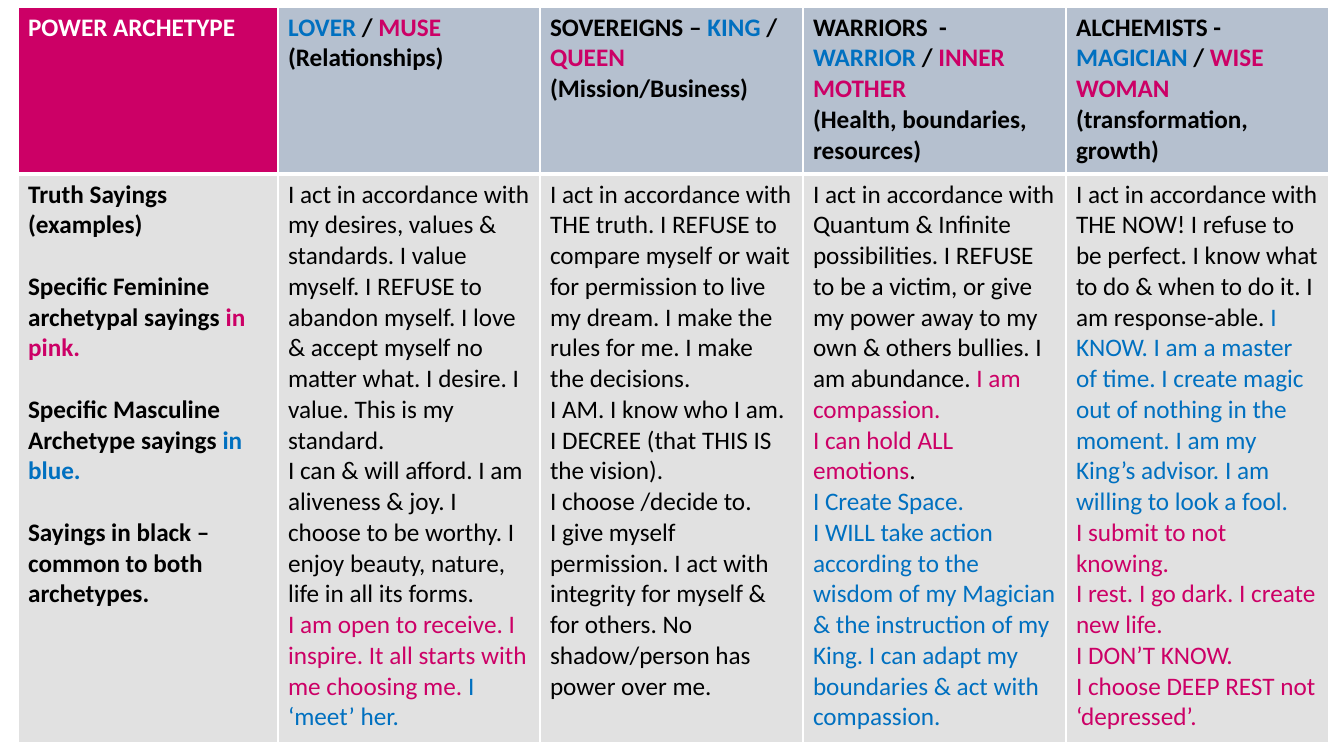
from lxml import etree
from pptx import Presentation
from pptx.dml.color import RGBColor
from pptx.oxml.ns import qn
from pptx.util import Emu, Pt

EMU_PER_PX = 914400 / 100.8
BLACK, WHITE = "000000", "FFFFFF"
PINK, BLUE = "CC0066", "0070C0"
HEADER_FILL, BODY_FILL = "B5C0CF", "E1E1E1"
COLUMNS = [260, 262, 263, 263, 263]
ROWS = [167, 569]

# Each cell is a list of paragraphs, each paragraph a list of (text, colour) runs.
HEADERS = [
    [[("POWER ARCHETYPE", WHITE)]],
    [[("LOVER ", BLUE), ("/ ", BLACK), ("MUSE ", PINK), ("(Relationships)", BLACK)]],
    [[("SOVEREIGNS – ", BLACK), ("KING ", BLUE), ("/ ", BLACK), ("QUEEN ", PINK),
      ("(Mission/Business)", BLACK)]],
    [[("WARRIORS  - ", BLACK), ("WARRIOR ", BLUE), ("/ ", BLACK), ("INNER MOTHER", PINK)],
     [("(Health, boundaries, resources)", BLACK)]],
    [[("ALCHEMISTS - ", BLACK), ("MAGICIAN ", BLUE), ("/ ", BLACK), ("WISE WOMAN", PINK)],
     [("(transformation, growth)", BLACK)]],
]
SAYINGS = [
    [[("Truth Sayings (examples)", BLACK)],
     [("Specific Feminine archetypal sayings ", BLACK), ("in pink.", PINK)],
     [("Specific Masculine Archetype sayings ", BLACK), ("in blue.", BLUE)],
     [("Sayings in black – common to both archetypes.", BLACK)]],
    [[("I act in accordance with my desires, values & standards. I value myself. "
       "I REFUSE to abandon myself. I love & accept myself no matter what. I desire. "
       "I value. This is my standard.", BLACK)],
     [("I can & will afford. I am aliveness & joy. I choose to be worthy. "
       "I enjoy beauty, nature, life in all its forms.", BLACK)],
     [("I am open to receive. I inspire. It all starts with me choosing me. ", PINK),
      ("I ‘meet’ her.", BLUE)]],
    [[("I act in accordance with THE truth. I REFUSE to compare myself or wait for "
       "permission to live my dream. I make the rules for me. I make the decisions.", BLACK)],
     [("I AM. I know who I am.", BLACK)],
     [("I DECREE (that THIS IS the vision).", BLACK)],
     [("I choose /decide to.", BLACK)],
     [("I give myself permission. I act with integrity for myself & for others. "
       "No shadow/person has power over me.", BLACK)]],
    [[("I act in accordance with Quantum & Infinite possibilities. I REFUSE to be a "
       "victim, or give my power away to my own & others bullies. I am abundance.", BLACK),
      (" I am compassion.", PINK)],
     [("I can hold ALL emotions", PINK), (".", BLACK)],
     [("I Create Space.", BLUE)],
     [("I WILL take action according to the wisdom of my Magician & the instruction of "
       "my King. I can adapt my boundaries & act with compassion.", BLUE)]],
    [[("I act in accordance with THE NOW! I refuse to be perfect. I know what to do & "
       "when to do it. I am response-able. ", BLACK),
      ("I KNOW. I am a master of time. I create magic out of nothing in the moment. "
       "I am my King’s advisor. I am willing to look a fool.", BLUE)],
     [("I submit to not knowing.", PINK)],
     [("I rest. I go dark. I create new life.", PINK)],
     [("I DON’T KNOW.", PINK)],
     [("I choose DEEP REST not ‘depressed’.", PINK)]],
]


def px(n):
    return Emu(round(n * EMU_PER_PX))


def rgb(color):
    return RGBColor.from_string(color)


class SlideBuilder:
    font, size, line_gap = "Calibri", Pt(18), Pt(22)

    def __init__(self, slide):
        self.slide = slide

    def table(self, left, top, columns, rows):
        frame = self.slide.shapes.add_table(len(rows), len(columns), px(left), px(top),
                                            px(sum(columns)), px(sum(rows)))
        table = frame.table
        for column, width in zip(table.columns, columns):
            column.width = px(width)
        for row, height in zip(table.rows, rows):
            row.height = px(height)
        return table

    def cell(self, cell, paragraphs, fill, bold, spaced=False):
        """Write coloured runs into a cell; spaced leaves a line between paragraphs."""
        cell.fill.solid()
        cell.fill.fore_color.rgb = rgb(fill)
        tf = cell.text_frame
        for i, runs in enumerate(paragraphs):
            p = tf.add_paragraph() if i else tf.paragraphs[0]
            if spaced and i:
                p.space_before = self.line_gap
            for text, color in runs:
                r = p.add_run()
                r.text = text
                r.font.name, r.font.size, r.font.bold = self.font, self.size, bold
                r.font.color.rgb = rgb(color)

    def borders(self, cell, **widths):
        """Draw white borders; widths are points by side, in the order L, R, T, B."""
        tcPr = cell._tc.get_or_add_tcPr()
        for i, (side, width) in enumerate(widths.items()):
            ln = etree.Element(qn(f"a:ln{side}"), w=str(Pt(width)))
            fill = etree.SubElement(ln, qn("a:solidFill"))
            etree.SubElement(fill, qn("a:srgbClr"), val=WHITE)
            tcPr.insert(i, ln)


def main():
    prs = Presentation()
    prs.slide_width, prs.slide_height = px(1344), px(756)
    s = SlideBuilder(prs.slides.add_slide(prs.slide_layouts[6]))
    table = s.table(18, 7, COLUMNS, ROWS)
    for col, (header, sayings) in enumerate(zip(HEADERS, SAYINGS)):
        first = col == 0
        top, body = table.cell(0, col), table.cell(1, col)
        s.cell(top, header, PINK if first else HEADER_FILL, bold=True)
        s.borders(top, L=1, R=1, T=1, B=3)
        s.cell(body, sayings, BODY_FILL, bold=first, spaced=first)
        s.borders(body, L=1, R=1, T=3, B=1)
    prs.save("out.pptx")


if __name__ == "__main__":
    main()
